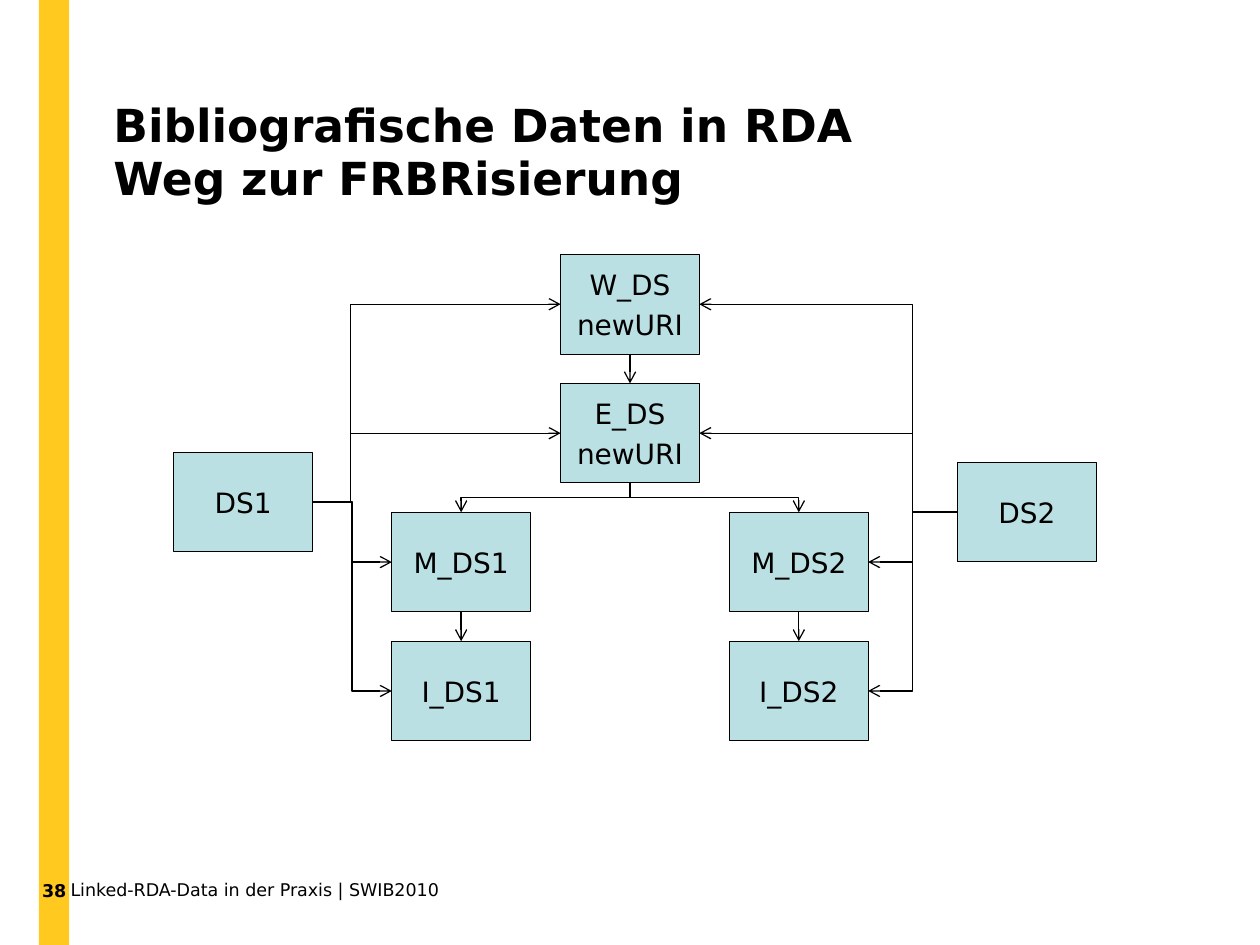
from lxml import etree
from pptx import Presentation
from pptx.dml.color import RGBColor
from pptx.enum import shapes, text
from pptx.oxml.ns import qn
from pptx.util import Emu, Inches, Pt

FONT = "DejaVu Sans"
BLACK = RGBColor(0x00, 0x00, 0x00)
YELLOW = RGBColor(0xFF, 0xC9, 0x20)
TEAL = RGBColor(0xBB, 0xE0, 0xE3)
TOP, LEFT, BOTTOM, RIGHT = range(4)

TITLE = ["Bibliografische Daten in RDA", "Weg zur FRBRisierung"]
FOOTER = "Linked-RDA-Data in der Praxis | SWIB2010"
PAGE = "38"

# Boxes: name -> (left, top, lines)
BOX_W, BOX_H = 1.1, 0.79
ROWS = [2.02 + 1.023 * i for i in range(4)]
COL_1, COL_MID, COL_2 = 3.11, 4.45, 5.79
BOXES = {
    "W": (COL_MID, ROWS[0], ["W_DS", "newURI"]),
    "E": (COL_MID, ROWS[1], ["E_DS", "newURI"]),
    "M1": (COL_1, ROWS[2], ["M_DS1"]),
    "I1": (COL_1, ROWS[3], ["I_DS1"]),
    "DS1": (1.38, 3.59, ["DS1"]),
    "M2": (COL_2, ROWS[2], ["M_DS2"]),
    "I2": (COL_2, ROWS[3], ["I_DS2"]),
    "DS2": (7.6, 3.67, ["DS2"]),
}
# Sideways links: source, its side, target side, [(target, bend as share of width)]
SIDE_LINKS = [
    ("DS1", RIGHT, LEFT, [("W", 0.154), ("E", 0.154), ("M1", 0.5), ("I1", 0.5)]),
    ("DS2", LEFT, RIGHT, [("W", 0.174), ("E", 0.174), ("M2", 0.5), ("I2", 0.5)]),
]
DOWN_LINKS = [("W", "E"), ("E", "M1"), ("E", "M2"), ("M1", "I1"), ("M2", "I2")]


def write(tf, lines, size, bold=False, align=None, line_spacing=None, gap=None):
    for i, line in enumerate(lines):
        p = tf.paragraphs[0] if i == 0 else tf.add_paragraph()
        p.alignment = align
        if line_spacing:
            p.line_spacing = Pt(line_spacing)
        if gap and i:
            p.space_before = Pt(gap)
        r = p.add_run()
        r.text = line
        r.font.name, r.font.size, r.font.bold = FONT, Pt(size), bold
        r.font.color.rgb = BLACK


def add_rect(x, y, w, h, fill):
    sp = s.shapes.add_shape(shapes.MSO_SHAPE.RECTANGLE,
                            Inches(x), Inches(y), Inches(w), Inches(h))
    sp.shadow.inherit = False
    sp.fill.solid()
    sp.fill.fore_color.rgb = fill
    return sp


def add_label(x, y, w, h, lines, size, **style):
    tf = s.shapes.add_textbox(Inches(x), Inches(y), Inches(w), Inches(h)).text_frame
    tf.word_wrap = True
    tf.margin_left = tf.margin_top = tf.margin_right = tf.margin_bottom = 0
    write(tf, lines, size, **style)


def add_arrow(kind, source, side_a, target, side_b):
    c = s.shapes.add_connector(kind, 0, 0, 0, 0)
    c.begin_connect(nodes[source], side_a)
    c.end_connect(nodes[target], side_b)
    c.line.color.rgb = BLACK
    c.line.width = Pt(0.75)
    etree.SubElement(c.line._get_or_add_ln(), qn("a:tailEnd"), type="arrow")
    etree.SubElement(c._element.spPr, qn("a:effectLst"))
    return c


def set_bend(c, share):
    guides = c._element.spPr.find(qn("a:prstGeom")).get_or_add_avLst()
    etree.SubElement(guides, qn("a:gd"), name="adj1", fmla=f"val {round(share * 100000)}")


def turn_down(c):
    """Rotate an elbow so that it leaves and arrives vertically."""
    to_right = c.end_x > c.begin_x
    mid_x, mid_y = c.left + c.width // 2, c.top + c.height // 2
    w, h = c.height, c.width
    c.left, c.top, c.width, c.height = map(Emu, (mid_x - w // 2, mid_y - h // 2, w, h))
    xfrm = c._element.spPr.find(qn("a:xfrm"))
    xfrm.set("rot", "16200000" if to_right else "5400000")
    xfrm.set("flipH", "1" if to_right else "0")
    xfrm.set("flipV", "0")


prs = Presentation()
prs.slide_width, prs.slide_height = Inches(10), Inches(7.5)
s = prs.slides.add_slide(prs.slide_layouts[6])

# Side bar with page number
bar = add_rect(0.31, 0, 0.24, 7.5, YELLOW)
bar.line.fill.background()
tf = bar.text_frame
tf.word_wrap = False
tf.vertical_anchor = text.MSO_ANCHOR.BOTTOM
tf.margin_left = tf.margin_right = 0
tf.margin_bottom = Inches(0.35)
write(tf, [PAGE], 10, bold=True, align=text.PP_ALIGN.CENTER)

# Title
add_label(0.9, 0.79, 8.3, 0.85, TITLE, 26, bold=True, line_spacing=30)

# Boxes
nodes = {}
for name, (x, y, lines) in BOXES.items():
    sp = nodes[name] = add_rect(x, y, BOX_W, BOX_H, TEAL)
    sp.line.color.rgb = BLACK
    sp.line.width = Pt(0.5)
    sp.text_frame.vertical_anchor = text.MSO_ANCHOR.MIDDLE
    write(sp.text_frame, lines, 16, align=text.PP_ALIGN.CENTER, gap=3.5)

# Links from the data sets
for source, side_a, side_b, targets in SIDE_LINKS:
    for target, share in targets:
        c = add_arrow(shapes.MSO_CONNECTOR.ELBOW, source, side_a, target, side_b)
        set_bend(c, share)

# Links down the hierarchy
for source, target in DOWN_LINKS:
    straight = BOXES[source][0] == BOXES[target][0]
    kind = shapes.MSO_CONNECTOR.STRAIGHT if straight else shapes.MSO_CONNECTOR.ELBOW
    c = add_arrow(kind, source, BOTTOM, target, TOP)
    if not straight:
        turn_down(c)
        set_bend(c, 0.5)

# Footer
add_label(0.56, 6.98, 8.61, 0.17, [FOOTER], 10)

prs.save("out.pptx")
